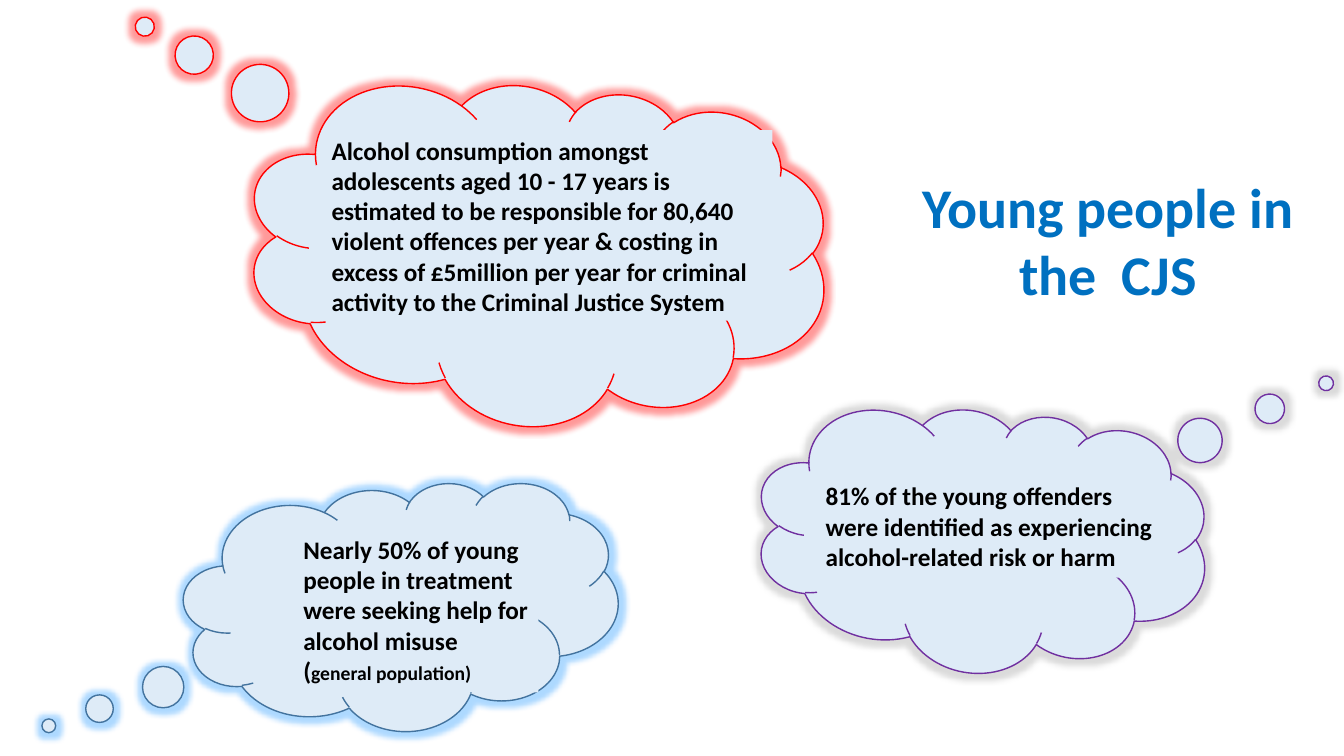
from lxml import etree
from pptx import Presentation
from pptx.dml.color import RGBColor
from pptx.enum.shapes import MSO_SHAPE
from pptx.enum.text import MSO_ANCHOR, MSO_AUTO_SIZE, PP_ALIGN
from pptx.oxml.ns import qn
from pptx.util import Inches, Pt

CLOUD = MSO_SHAPE.CLOUD_CALLOUT
RECT = MSO_SHAPE.RECTANGLE
LEFT, CENTER = PP_ALIGN.LEFT, PP_ALIGN.CENTER
TOP = MSO_ANCHOR.TOP
FIT = MSO_AUTO_SIZE.SHAPE_TO_FIT_TEXT
NO_FIT = MSO_AUTO_SIZE.NONE

BLACK = RGBColor(0x00, 0x00, 0x00)
PALE = RGBColor(0xDE, 0xEB, 0xF7)
RED = RGBColor(0xFF, 0x00, 0x00)
STEEL = RGBColor(0x43, 0x73, 0x9E)
PURPLE = RGBColor(0x70, 0x30, 0xA0)
BLUE = RGBColor(0x00, 0x70, 0xC0)
SKY = RGBColor(0x33, 0xA0, 0xFF)
GREY = RGBColor(0xA5, 0xA5, 0xA5)


class Board:
    font = "Calibri"

    def __init__(self, deck):
        self.slide = deck.slides.add_slide(deck.slide_layouts[5])

    def add_text(self, para, text, size=18, color=BLACK, align=LEFT):
        para.alignment = align
        run = para.add_run()
        run.text = text
        font = run.font
        font.name, font.size, font.bold = self.font, Pt(size), True
        font.color.rgb = color

    def title(self, text, box):
        shape = self.slide.shapes.title
        shape.left, shape.top, shape.width, shape.height = map(Inches, box)
        frame = shape.text_frame
        frame.word_wrap, frame.auto_size = True, NO_FIT
        frame.vertical_anchor = TOP
        self.add_text(frame.paragraphs[0], text, size=40, color=BLUE, align=CENTER)

    def shape(self, group, kind, box):
        shape = group.shapes.add_shape(kind, *map(Inches, box))
        shape.shadow.inherit = False
        shape.fill.solid()
        shape.fill.fore_color.rgb = PALE
        return shape

    def glow(self, shape, color):
        effects = shape._element.spPr.find(qn("a:effectLst"))
        halo = etree.SubElement(effects, qn("a:glow"), rad=str(Pt(8)))
        tint = etree.SubElement(halo, qn("a:srgbClr"), val=str(color))
        etree.SubElement(tint, qn("a:alpha"), val="40000")

    def cloud(self, box, tail, line, halo, label, paras, turn=0):
        """Group a thought cloud with its label; paras hold (text, size) runs."""
        group = self.slide.shapes.add_group_shape()
        cloud = self.shape(group, CLOUD, box)
        cloud.rotation = turn
        cloud.adjustments[0], cloud.adjustments[1] = tail
        cloud.line.color.rgb = line
        cloud.line.width = Pt(1)
        self.glow(cloud, halo)

        note = self.shape(group, RECT, label)
        note.line.fill.background()
        frame = note.text_frame
        frame.word_wrap, frame.auto_size = True, FIT
        frame.vertical_anchor = TOP
        for i, runs in enumerate(paras):
            para = frame.add_paragraph() if i else frame.paragraphs[0]
            for text, size in runs:
                self.add_text(para, text, size=size)


def main():
    deck = Presentation()
    deck.slide_width, deck.slide_height = Inches(13.33), Inches(7.5)
    board = Board(deck)
    board.cloud(
        (2.47, 0.8, 5.73, 3.42), (-0.74, -0.44), RED, RED,
        (3.19, 1.29, 4.47, 1.89),
        [[("Alcohol consumption amongst adolescents aged 10 - 17 years is "
           "estimated to be responsible for 80,640 violent offences per year "
           "& costing in excess of £5million per year for criminal activity "
           "to the Criminal Justice System", 18)]],
        turn=10.4)
    board.cloud(
        (1.82, 4.79, 4.31, 2.46), (-0.81, 0.48), STEEL, SKY,
        (2.91, 5.25, 2.43, 1.62),
        [[("Nearly 50% of young people in treatment were seeking help "
           "for alcohol misuse", 18)],
         [("(", 18), ("general population)", 14)]])
    board.cloud(
        (7.51, 4.03, 4.46, 2.64), (0.69, -0.81), PURPLE, GREY,
        (8.09, 4.72, 3.48, 1.01),
        [[("81% of the young offenders were identified as experiencing "
           "alcohol-related risk or harm", 18)]],
        turn=10.4)
    board.title("Young people in the  CJS", (8.88, 1.66, 4.22, 1.45))
    deck.save("out.pptx")


if __name__ == "__main__":
    main()
